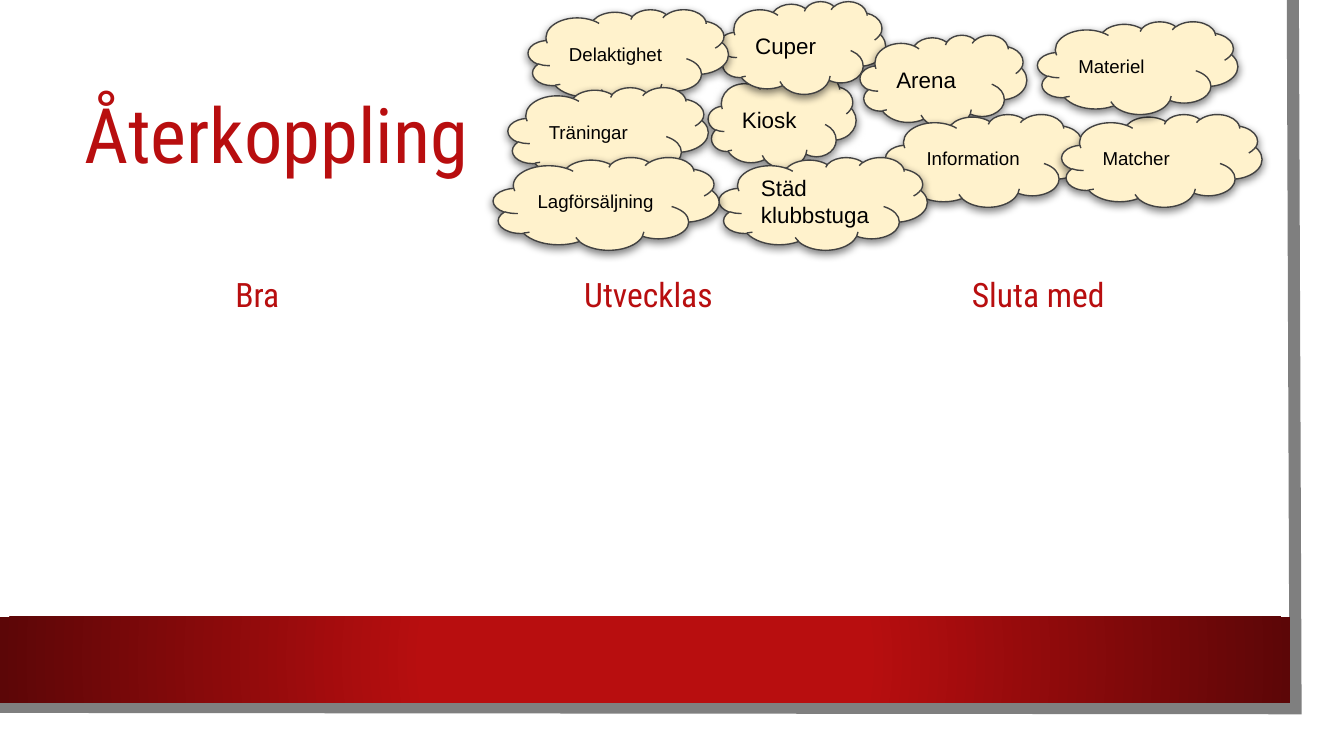
from pptx import Presentation
from pptx.dml.color import RGBColor
from pptx.enum.shapes import MSO_SHAPE
from pptx.enum.text import MSO_ANCHOR, PP_ALIGN
from pptx.oxml import parse_xml
from pptx.oxml.ns import nsdecls, qn
from pptx.util import Inches, Pt

CLOUD, RECT = MSO_SHAPE.CLOUD, MSO_SHAPE.RECTANGLE
MIDDLE, BOTTOM = MSO_ANCHOR.MIDDLE, MSO_ANCHOR.BOTTOM
LEFT, CENTER = PP_ALIGN.LEFT, PP_ALIGN.CENTER

COLORS = {
    "red": "B80E0F",
    "dark_red": "5C0607",
    "cream": "FFF2CC",
    "outline": "424242",
    "frame": "7F7F7F",
    "black": "000000",
}
HEADING_FONT, CLOUD_FONT = "Roboto Condensed", "Arial"
CLOUD_HEIGHT = 0.69
CLOUDS = [
    ("Kiosk", 5.27, 0.56, 1.1, 12),
    ("Cuper", 5.35, 0.01, 1.24, 12),
    ("Arena", 6.4, 0.26, 1.24, 12),
    ("Information", 6.59, 0.85, 1.49, 10),
    ("Delaktighet", 3.93, 0.07, 1.49, 10),
    ("Träningar", 3.78, 0.65, 1.49, 10),
    ("Matcher", 7.9, 0.85, 1.49, 10),
    ("Materiel", 7.72, 0.16, 1.49, 10),
    ("Städ klubbstuga", 5.35, 1.17, 1.55, 12),
    ("Lagförsäljning", 3.67, 1.17, 1.68, 10),
]
COLUMNS = [("Bra", 0.56), ("Utvecklas", 3.47), ("Sluta med", 6.37)]


def rgb(name):
    """Return the named colour."""
    return RGBColor.from_string(COLORS[name])


def set_text(sp, text, font, size, color, anchor, align, inset):
    """Fill a shape with one formatted paragraph and return it."""
    tf = sp.text_frame
    tf.word_wrap = True
    tf.vertical_anchor = anchor
    tf.margin_left = tf.margin_right = Inches(inset)
    tf.margin_top = tf.margin_bottom = Inches(inset)
    tf.text = text
    p = tf.paragraphs[0]
    p.alignment = align
    r = p.runs[0]
    r.font.name, r.font.size = font, Pt(size)
    r.font.color.rgb = rgb(color)
    return p


def add_frame(s):
    """Draw the grey edge along the right and bottom."""
    builder = s.shapes.build_freeform(Inches(9.62), 0)
    points = [(9.64, 5.27), (-0.02, 5.26)]
    builder.add_line_segments([(Inches(x), Inches(y)) for x, y in points], close=False)
    sp = builder.convert_to_shape()
    sp.shadow.inherit = False
    sp.fill.background()
    sp.line.color.rgb = rgb("frame")
    sp.line.width = Pt(6.5)
    miter = parse_xml(f'<a:miter {nsdecls("a")} lim="800000"/>')
    sp.element.spPr.find(qn("a:ln")).append(miter)


def add_band(s):
    """Draw the red band with its radial gradient."""
    sp = s.shapes.add_shape(RECT, 0, Inches(4.59), Inches(9.6), Inches(0.64))
    sp.shadow.inherit = False
    sp.line.fill.background()
    sp.fill.background()
    stops = "".join(
        f'<a:gs pos="{pos * 1000}"><a:srgbClr val="{COLORS[color]}"/></a:gs>'
        for pos, color in [(0, "red"), (34, "red"), (100, "dark_red")]
    )
    gradient = parse_xml(
        f'<a:gradFill {nsdecls("a")}><a:gsLst>{stops}</a:gsLst><a:path path="circle">'
        '<a:fillToRect l="50000" t="50000" r="50000" b="50000"/></a:path></a:gradFill>'
    )
    spPr = sp.element.spPr
    spPr.replace(spPr.find(qn("a:noFill")), gradient)


def add_heading(s, text, box, size, anchor, align):
    """Add a red heading in a text box."""
    sp = s.shapes.add_textbox(*map(Inches, box))
    p = set_text(sp, text, HEADING_FONT, size, "red", anchor, align, 0.07)
    p.line_spacing = 0.9


def add_cloud(s, text, left, top, width, size):
    """Add a cream cloud with a soft shadow and a label."""
    box = map(Inches, (left, top, width, CLOUD_HEIGHT))
    sp = s.shapes.add_shape(CLOUD, *box)
    sp.shadow.inherit = False
    sp.fill.solid()
    sp.fill.fore_color.rgb = rgb("cream")
    sp.line.color.rgb = rgb("outline")
    sp.line.width = Pt(0.75)
    sp.element.spPr.find(qn("a:effectLst")).append(parse_xml(
        f'<a:outerShdw {nsdecls("a")} blurRad="{Pt(4.5)}" dist="{Pt(1.5)}" '
        f'dir="5400000" algn="bl" rotWithShape="0"><a:srgbClr val="{COLORS["black"]}">'
        '<a:alpha val="50000"/></a:srgbClr></a:outerShdw>'
    ))
    set_text(sp, text, CLOUD_FONT, size, "black", MIDDLE, LEFT, 0.1)


def main():
    """Build the feedback slide."""
    prs = Presentation()
    prs.slide_width = Inches(10)
    prs.slide_height = prs.slide_width * 9 // 16
    s = prs.slides.add_slide(prs.slide_layouts[6])
    add_frame(s)
    add_band(s)
    add_heading(s, "Återkoppling", (0.56, 0.56, 8.53, 0.94), 41, MIDDLE, LEFT)
    for text, left in COLUMNS:
        add_heading(s, text, (left, 1.94, 2.71, 0.47), 18, BOTTOM, CENTER)
    for cloud in CLOUDS:
        add_cloud(s, *cloud)
    prs.save("out.pptx")


if __name__ == "__main__":
    main()
